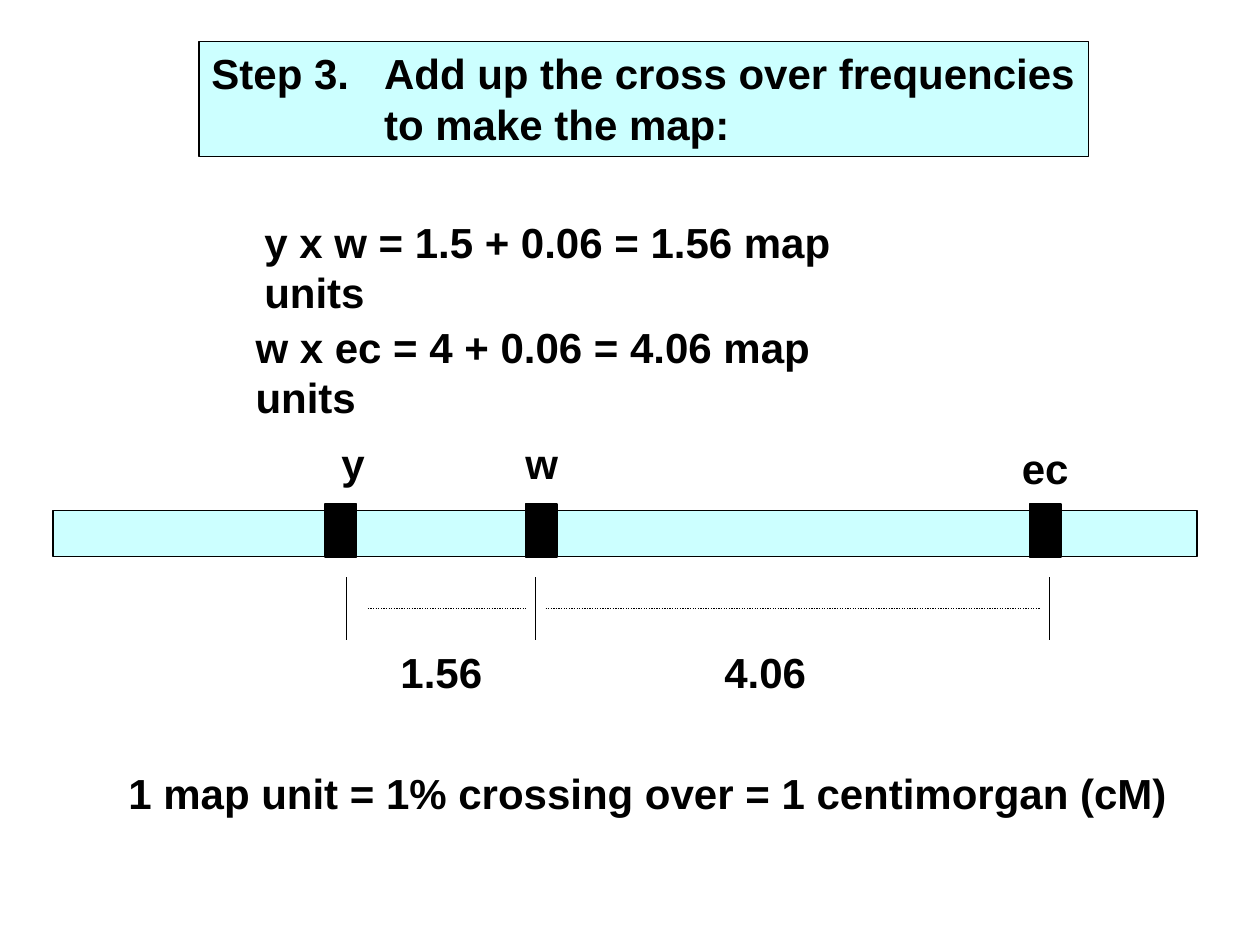
from lxml import etree
from pptx import Presentation
from pptx import util as u
from pptx.dml.color import RGBColor
from pptx.enum import dml, shapes, text
from pptx.oxml import ns

BLACK = RGBColor(0x00, 0x00, 0x00)
PALE_CYAN = RGBColor(0xCC, 0xFF, 0xFF)
FONT = {"name": "Arial", "size": u.Pt(24), "bold": True}
FRAME = {
    "word_wrap": True,
    "auto_size": text.MSO_AUTO_SIZE.NONE,
    "vertical_anchor": text.MSO_ANCHOR.TOP,
    "margin_left": u.Inches(0.1),
    "margin_right": 0,
    "margin_top": u.Inches(0.05),
    "margin_bottom": u.Inches(0.05),
}


def apply(obj, values):
    for name, value in values.items():
        setattr(obj, name, value)


def write(sp, lines, **frame):
    tf = sp.text_frame
    apply(tf, {**FRAME, **frame})
    for i, line in enumerate(lines):
        p = tf.paragraphs[0] if i == 0 else tf.add_paragraph()
        p.alignment = text.PP_ALIGN.LEFT
        r = p.add_run()
        r.text = line
        apply(r.font, FONT)
        r.font.color.rgb = BLACK
    return tf


def add_label(parent, box, line, **frame):
    sp = parent.add_textbox(*map(u.Inches, box))
    write(sp, [line], **frame)


def add_box(parent, box, fill):
    sp = parent.add_shape(shapes.MSO_SHAPE.RECTANGLE, *map(u.Inches, box))
    sp.shadow.inherit = False
    sp.fill.solid()
    sp.fill.fore_color.rgb = fill
    sp.line.color.rgb = BLACK
    sp.line.width = u.Pt(0.75)
    return sp


def add_line(parent, x1, y1, x2, y2, dash=None):
    ends = map(u.Inches, (x1, y1, x2, y2))
    cx = parent.add_connector(shapes.MSO_CONNECTOR.STRAIGHT, *ends)
    cx.line.color.rgb = BLACK
    cx.line.width = u.Pt(0.75)
    if dash:
        cx.line.dash_style = dash
    etree.SubElement(cx._element.spPr, ns.qn("a:effectLst"))


def add_title(s, box):
    sp = add_box(s.shapes, box, PALE_CYAN)
    tf = write(sp, ["Step 3.\tAdd up the cross over frequencies", "to make the map:"])
    for p, indent in zip(tf.paragraphs, (-1.37, 0)):
        pPr = p._p.get_or_add_pPr()
        pPr.set("marL", str(u.Inches(1.37)))
        pPr.set("indent", str(u.Inches(indent)))


def add_chromosome(s, box, genes):
    left, top, width, height = box
    add_box(s.shapes, box, PALE_CYAN)
    for name, offset, label_offset, label_width, rise in genes:
        add_box(s.shapes, (left + offset, top - 0.05, 0.25, height + 0.05), BLACK)
        label_box = (left + label_offset, top - rise, label_width, 0.5)
        add_label(s.shapes, label_box, name, margin_left=u.Inches(0.19))


def add_distance(s, box, ticks, span, label, label_left):
    left, top, width, height = box
    group = s.shapes.add_group_shape().shapes
    for x in ticks:
        add_line(group, left + x, top, left + x, top + height)
    middle = top + height / 2
    add_line(group, left + span[0], middle, left + span[1], middle,
             dml.MSO_LINE.ROUND_DOT)
    add_label(group, (left + label_left, top + height, 0.85, 0.5), label)


def main():
    prs = Presentation()
    prs.slide_width, prs.slide_height = u.Inches(10), u.Inches(7.5)
    s = prs.slides.add_slide(prs.slide_layouts[6])
    add_chromosome(s, (0.42, 4.05, 9.08, 0.37), [
        ("y", 2.16, 2.1, 0.48, 0.63),
        ("w", 3.75, 3.56, 0.55, 0.63),
        ("ec", 7.75, 7.5, 0.66, 0.59),
    ])
    add_distance(s, (2.75, 4.58, 1.5, 0.5), (0, 1.5), (0.17, 1.42), "1.56", 0.33)
    add_distance(s, (4.25, 4.58, 4.08, 0.5), (4.08,), (0.08, 4), "4.06", 1.4)
    add_title(s, (1.58, 0.33, 7.06, 0.91))
    for box, line in [
        ((1.93, 2.5, 5.3, 0.5), "w x ec = 4 + 0.06 = 4.06 map units"),
        ((2, 1.67, 5.4, 0.5), "y x w = 1.5 + 0.06 = 1.56 map units"),
        ((0.92, 6.04, 8.52, 0.5), "1 map unit = 1% crossing over = 1 centimorgan (cM)"),
    ]:
        add_label(s.shapes, box, line)
    prs.save("out.pptx")


if __name__ == "__main__":
    main()
